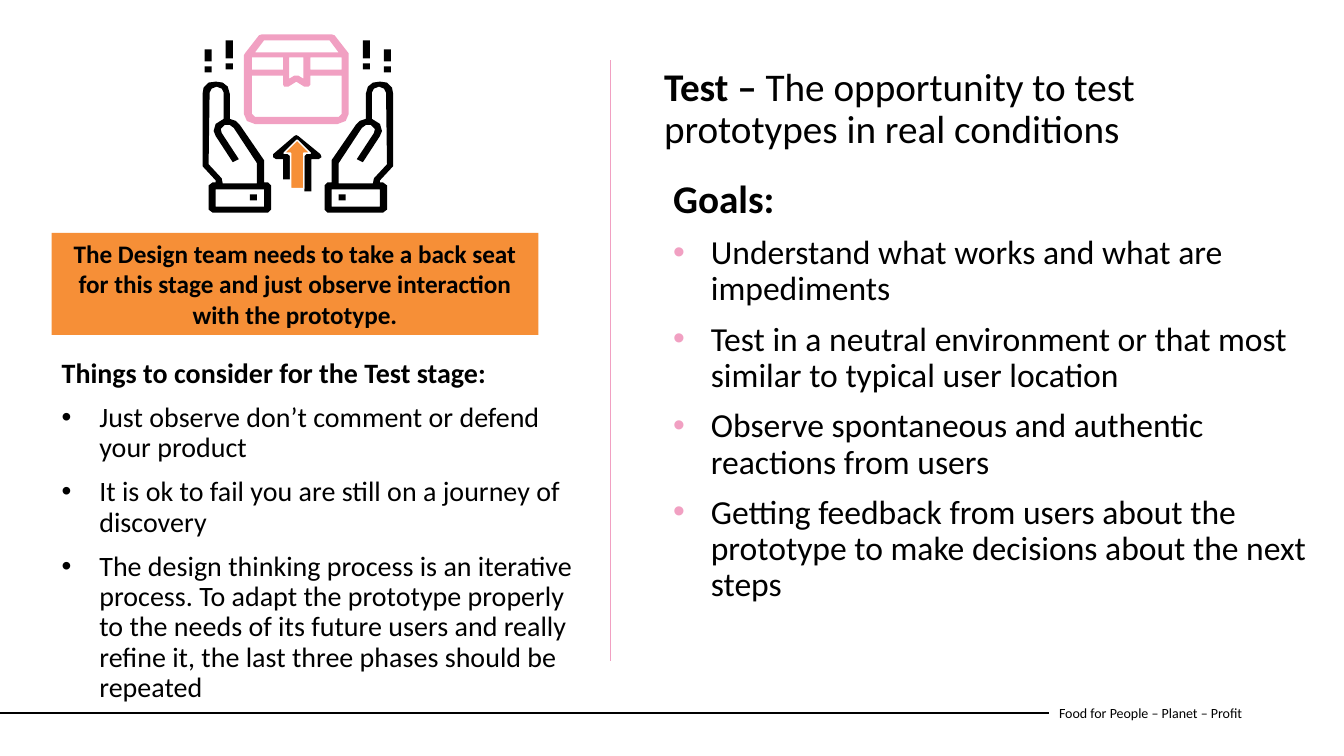
from lxml import etree
from pptx import Presentation
from pptx import util as u
from pptx.dml.color import RGBColor
from pptx.enum import shapes, text
from pptx.oxml.ns import qn

# Content
COLORS = {"ink": "000000", "pink": "F1A0C2", "orange": "F68F37", "white": "FFFFFF"}
FONT = "Calibri"
TEST = [("Test – ", True), ("The opportunity to test prototypes in real conditions", False)]
GOALS = ("Goals:", [
    "Understand what works and what are impediments",
    "Test in a neutral environment or that most similar to typical user location",
    "Observe spontaneous and authentic reactions from users",
    "Getting feedback from users about the prototype to make decisions about the next steps",
])
CONSIDERATIONS = ("Things to consider for the Test stage:", [
    "Just observe don’t comment or defend your product",
    "It is ok to fail you are still on a journey of discovery",
    "The design thinking process is an iterative process. To adapt the prototype properly "
    "to the needs of its future users and really refine it, the last three phases should be repeated",
])
ADVICE = ("The Design team needs to take a back seat for this stage "
          "and just observe interaction with the prototype.")
MOTTO = "Food for People – Planet – Profit"

# Places in cm: left, top, width, height
TEST_AT = (16.48, 1.57, 16.81, 3.18)
GOALS_AT = (16.71, 4.39, 16.81, 10.34)
CONSIDERATIONS_AT = (1.3, 8.92, 13.79, 9.55)
ADVICE_AT = (1.3, 5.87, 12.27, 2.57)
MOTTO_AT = (26.44, 17.45, 6.93, 1.02)
ARROW_AT = (7.16, 3.53, 0.66, 1.22)

# Icon outlines on a fine grid; the hands and marks mirror about its axis
GRID = 0.0254
AXIS = 295.5
HAND = [
    [(377, 81), (370, 82), (365, 86), (363, 93), (363, 118), (357, 120), (353, 124), (329, 159),
     (329, 181), (325, 181), (322, 184), (322, 208), (325, 211), (380, 211), (384, 208),
     (384, 184), (380, 181), (377, 181), (377, 179), (390, 165), (390, 93), (389, 87), (384, 82)],
    [(377, 205), (329, 205), (329, 188), (377, 188)],
    [(384, 163), (371, 177), (370, 182), (336, 182), (336, 162), (359, 127), (363, 124),
     (368, 124), (372, 128), (371, 132), (354, 158), (360, 161), (377, 135), (379, 130),
     (377, 123), (369, 118), (369, 92), (371, 88), (376, 86), (381, 88), (383, 92)],
]
PARCEL = [
    [(346, 53), (332, 35), (329, 34), (260, 34), (257, 35), (243, 53), (242, 55), (242, 113),
     (245, 120), (253, 123), (335, 123), (343, 120), (346, 113)],
    [(262, 40), (327, 40), (336, 52), (253, 52)],
    [(301, 57), (301, 78), (296, 75), (292, 75), (287, 78), (287, 57)],
    [(250, 57), (281, 57), (281, 69), (250, 69)],
    [(339, 113), (336, 116), (253, 116), (250, 113), (250, 75), (281, 75), (281, 84), (282, 86),
     (286, 86), (294, 81), (302, 86), (306, 86), (308, 84), (308, 75), (339, 75)],
    [(339, 69), (308, 69), (308, 57), (339, 57)],
]
LIFT = [[(296, 135), (294, 134), (292, 135), (271, 153), (271, 156), (274, 158), (281, 158),
         (281, 178), (288, 178), (288, 155), (284, 152), (282, 152), (295, 141), (307, 152),
         (305, 152), (302, 155), (302, 190), (309, 190), (309, 158), (316, 158), (319, 156),
         (318, 153)]]
MARKS = [(360, 40, 7, 18), (360, 63, 7, 6), (381, 49, 7, 12), (381, 66, 7, 6), (336, 193, 7, 6)]

prs = Presentation()
prs.slide_width, prs.slide_height = u.Cm(33.87), u.Cm(19.05)
slide = prs.slides.add_slide(prs.slide_layouts[3])


def rgb(name):
    return RGBColor.from_string(COLORS[name])


def cms(values):
    return [u.Cm(value) for value in values]


def place(part, at):
    part.left, part.top, part.width, part.height = cms(at)


def style(paragraph, size, bold=False):
    for run in paragraph.runs:
        run.font.name, run.font.size, run.font.bold = FONT, u.Pt(size), bold
        run.font.color.rgb = rgb("ink")


def space(paragraph):
    paragraph.alignment = text.PP_ALIGN.LEFT
    paragraph.line_spacing, paragraph.space_before = 0.9, u.Pt(10)


def paint(part, fill):
    part.shadow.inherit = False
    part.fill.solid()
    part.fill.fore_color.rgb = rgb(fill)
    part.line.fill.background()


def fill_list(body, at, content, heading_size, item_size, bullet):
    place(body, at)
    heading, items = content
    frame = body.text_frame
    frame.auto_size = text.MSO_AUTO_SIZE.NONE
    frame.text = "\n".join([heading, *items])
    for number, paragraph in enumerate(frame.paragraphs):
        space(paragraph)
        style(paragraph, item_size if number else heading_size, number == 0)
        props = paragraph._p.get_or_add_pPr()
        indent = u.Cm(0.95) if number else 0
        props.set("marL", str(indent))
        props.set("indent", str(-indent))
        if number:
            color = etree.SubElement(props, qn("a:buClr"))
            etree.SubElement(color, qn("a:srgbClr"), val=COLORS[bullet])
            etree.SubElement(props, qn("a:buFont"), typeface="Arial")
            etree.SubElement(props, qn("a:buChar"), char="•")
        else:
            etree.SubElement(props, qn("a:buNone"))


def rule(start, end, color, width):
    line = slide.shapes.add_connector(shapes.MSO_CONNECTOR.STRAIGHT, *cms(start + end))
    line.line.color.rgb, line.line.width = rgb(color), u.Pt(width)
    etree.SubElement(line._element.spPr, qn("a:effectLst"))
    return line


def outline(contours, fill):
    builder = slide.shapes.build_freeform(*contours[0][0], scale=u.Cm(1) * GRID)
    for number, points in enumerate(contours):
        if number:
            builder.move_to(*points[0])
        builder.add_line_segments(points[1:], close=True)
    paint(builder.convert_to_shape(), fill)


# Title and lists
test, considerations, goals = slide.placeholders
place(test, TEST_AT)
test.text_frame.vertical_anchor = text.MSO_ANCHOR.TOP
test.text_frame.auto_size = text.MSO_AUTO_SIZE.NONE
test.text_frame.margin_right = u.Cm(0.8)
statement = test.text_frame.paragraphs[0]
space(statement)
for words, bold in TEST:
    statement.add_run().text = words
style(statement, 28)
for run, (words, bold) in zip(statement.runs, TEST):
    run.font.bold = bold
fill_list(goals, GOALS_AT, GOALS, 28, 24, "pink")
fill_list(considerations, CONSIDERATIONS_AT, CONSIDERATIONS, 20, 20, "ink")

# Advice box
advice = slide.shapes.add_shape(shapes.MSO_SHAPE.RECTANGLE, *cms(ADVICE_AT))
paint(advice, "orange")
advice.text_frame.text = ADVICE
advice.text_frame.paragraphs[0].alignment = text.PP_ALIGN.CENTER
style(advice.text_frame.paragraphs[0], 18, True)

# Footer and dividing lines
motto = slide.shapes.add_textbox(*cms(MOTTO_AT))
motto.text_frame.word_wrap = True
motto.text_frame.vertical_anchor = text.MSO_ANCHOR.MIDDLE
motto.text_frame.text = MOTTO
style(motto.text_frame.paragraphs[0], 10)
footer_rule = rule((0, 17.96), (26.44, 17.96), "ink", 1.5)
footer_rule.end_connect(motto, 1)
rule((15.39, 1.52), (15.39, 16.66), "pink", 0.5)

# Icon: parcel lifted by two hands
outline(PARCEL, "pink")
outline(LIFT, "ink")
outline(HAND, "ink")
outline([[(2 * AXIS - x, y) for x, y in points] for points in HAND], "ink")
for x, y, width, height in MARKS:
    for left in (x, 2 * AXIS - x - width):
        mark_at = [value * GRID for value in (left, y, width, height)]
        paint(slide.shapes.add_shape(shapes.MSO_SHAPE.RECTANGLE, *cms(mark_at)), "ink")
arrow = slide.shapes.add_shape(shapes.MSO_SHAPE.UP_ARROW, *cms(ARROW_AT))
paint(arrow, "orange")
arrow.line.color.rgb, arrow.line.width = rgb("white"), u.Pt(1)

prs.save("out.pptx")
